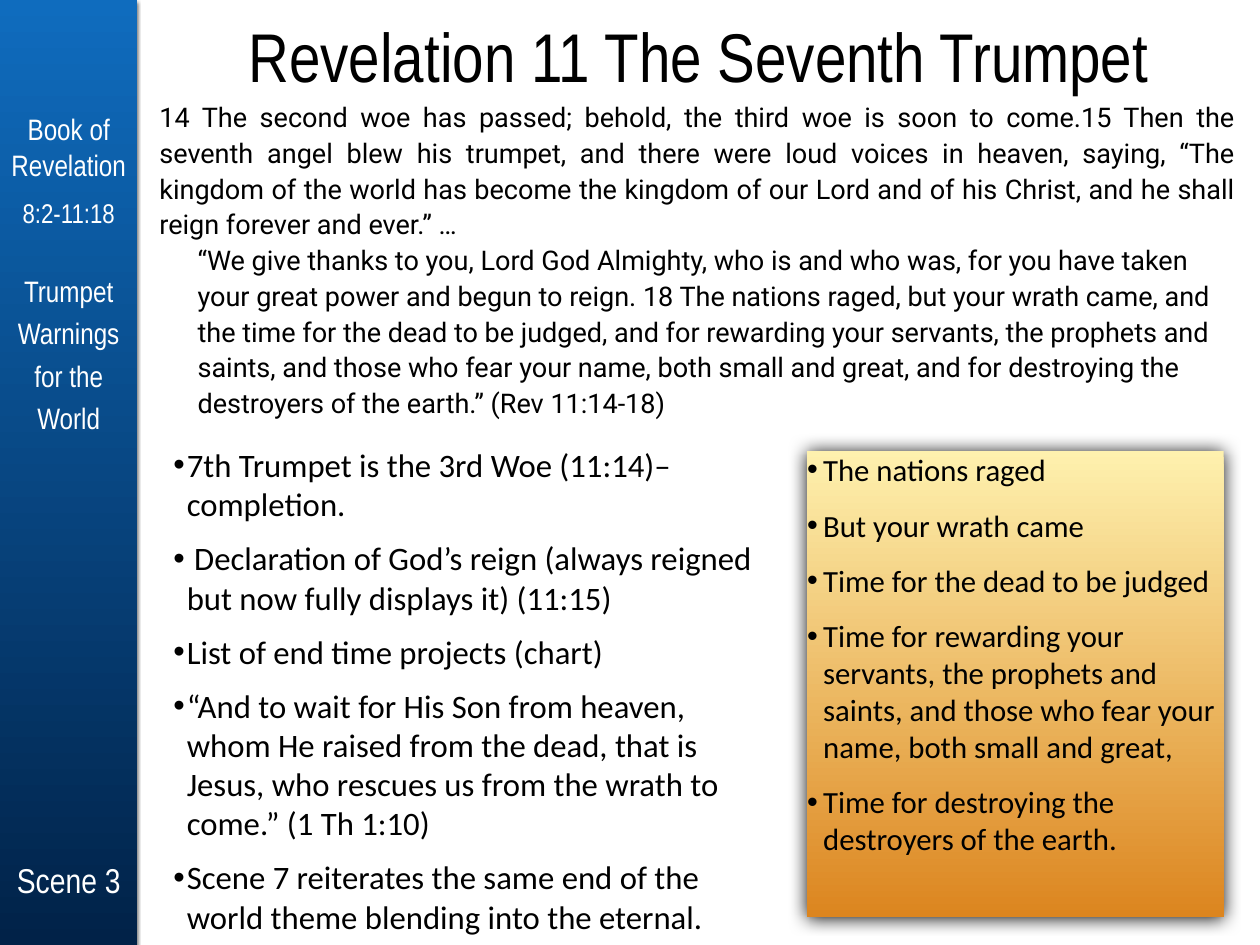
from lxml import etree
from pptx import Presentation
from pptx.dml.color import RGBColor
from pptx.enum.shapes import MSO_SHAPE
from pptx.enum.text import MSO_ANCHOR, PP_ALIGN
from pptx.oxml.ns import qn
from pptx.util import Pt

SLIDE_WIDTH, SLIDE_HEIGHT = 1024, 768
SIDEBAR_WIDTH = 111.6
BLACK, WHITE = "000000", "FFFFFF"
NARROW = "Arial Narrow"

SIDEBAR_LABELS = [  # text, top, height, size, line spacing, inset
    ("Book of Revelation", 90.7, 56.9, 24, 1, 0),
    ("8:2-11:18", 144.7, 56.9, 22, 1, 0),
    ("Trumpet Warnings for the World", 225.4, 119.5, 24, 1.2, 4.3),
    ("Scene 3", 679.7, 69.8, 28, 1, 0),
]
NARRATIVE = (
    "14 The second woe has passed; behold, the third woe is soon to come."
    "15 Then the seventh angel blew his trumpet, and there were loud voices in heaven, "
    "saying, “The kingdom of the world has become the kingdom of our Lord and of his "
    "Christ, and he shall reign forever and ever.” …"
)
THANKSGIVING = (
    "“We give thanks to you, Lord God Almighty, who is and who was, for you have taken "
    "your great power and begun to reign. 18 The nations raged, but your wrath came, "
    "and the time for the dead to be judged, and for rewarding your servants, the "
    "prophets and saints, and those who fear your name, both small and great, and for "
    "destroying the destroyers of the earth.” (Rev 11:14-18)"
)
MAIN_POINTS = [
    "7th Trumpet is the 3rd Woe (11:14)–completion.",
    " Declaration of God’s reign (always reigned but now fully displays it) (11:15)",
    "List of end time projects (chart)",
    "“And to wait for His Son from heaven, whom He raised from the dead, that is Jesus, "
    "who rescues us from the wrath to come.” (1 Th 1:10)",
    "Scene 7 reiterates the same end of the world theme blending into the eternal.",
]
END_TIME_PROJECTS = [
    "The nations raged",
    "But your wrath came",
    "Time for the dead to be judged",
    "Time for rewarding your servants, the prophets and saints, and those who fear "
    "your name, both small and great,",
    "Time for destroying the destroyers of the earth.",
]


def color(hex_string):
    return RGBColor.from_string(hex_string)


def set_font(paragraph, name, size, hex_string):
    paragraph.font.name = name
    paragraph.font.size = Pt(size)
    paragraph.font.color.rgb = color(hex_string)


def prepare_frame(shape, inset=0, anchor=MSO_ANCHOR.TOP):
    frame = shape.text_frame
    frame.word_wrap = True
    frame.vertical_anchor = anchor
    frame.margin_left = frame.margin_right = Pt(inset)
    frame.margin_top = frame.margin_bottom = Pt(inset)
    return frame


def add_paragraphs(frame, texts):
    """Fill the frame with one paragraph per text and return the paragraphs."""
    for index, text in enumerate(texts):
        paragraph = frame.add_paragraph() if index else frame.paragraphs[0]
        paragraph.text = text
    return frame.paragraphs


def add_text(slide, box, texts, font, size, hex_string, align, spacing=1, inset=0):
    shape = slide.shapes.add_textbox(*map(Pt, box))
    frame = prepare_frame(shape, inset, MSO_ANCHOR.MIDDLE)
    paragraphs = add_paragraphs(frame, texts)
    for paragraph in paragraphs:
        paragraph.alignment = align
        paragraph.line_spacing = spacing
        set_font(paragraph, font, size, hex_string)
    return paragraphs


def add_rectangle(slide, box):
    shape = slide.shapes.add_shape(MSO_SHAPE.RECTANGLE, *map(Pt, box))
    shape.shadow.inherit = False
    shape.line.fill.background()
    return shape


def add_gradient_panel(slide, box, top_color, bottom_color, alpha, blur, distance):
    """Add a rectangle with a downward gradient and a soft black shadow below it."""
    shape = add_rectangle(slide, box)
    shape.fill.gradient()
    shape.fill.gradient_angle = 270
    for stop, hex_string in zip(shape.fill.gradient_stops, (top_color, bottom_color)):
        stop.color.rgb = color(hex_string)
    effects = shape._element.spPr.find(qn("a:effectLst"))
    shadow = etree.SubElement(
        effects, qn("a:outerShdw"), blurRad=str(Pt(blur)), dist=str(Pt(distance)),
        dir="5400000", algn="ctr", rotWithShape="0")
    shade = etree.SubElement(shadow, qn("a:srgbClr"), val=BLACK)
    etree.SubElement(shade, qn("a:alpha"), val=str(alpha * 1000))
    return shape


def add_bullets(shape, texts, size, indent, gap):
    for index, paragraph in enumerate(add_paragraphs(prepare_frame(shape), texts)):
        properties = paragraph._p.get_or_add_pPr()
        properties.set("marL", str(Pt(indent)))
        properties.set("indent", str(-Pt(indent)))
        etree.SubElement(properties, qn("a:buFont"), typeface="Arial")
        etree.SubElement(properties, qn("a:buChar"), char="•")
        paragraph.alignment = PP_ALIGN.LEFT
        paragraph.space_before = Pt(gap if index else 0)
        set_font(paragraph, "Calibri", size, BLACK)


def add_sidebar(slide):
    add_gradient_panel(slide, (0, 0, SIDEBAR_WIDTH, SLIDE_HEIGHT),
                       "0F6CBE", "012248", 50, 3, 2)
    for text, top, height, size, spacing, inset in SIDEBAR_LABELS:
        add_text(slide, (0, top, SIDEBAR_WIDTH, height), [text], NARROW, size, WHITE,
                 PP_ALIGN.CENTER, spacing, inset)


def main():
    presentation = Presentation()
    presentation.slide_width = Pt(SLIDE_WIDTH)
    presentation.slide_height = Pt(SLIDE_HEIGHT)
    slide = presentation.slides.add_slide(presentation.slide_layouts[6])

    add_sidebar(slide)
    add_text(slide, (SIDEBAR_WIDTH, 10, SLIDE_WIDTH - SIDEBAR_WIDTH, 70),
             ["Revelation 11 The Seventh Trumpet"], NARROW, 56, BLACK, PP_ALIGN.CENTER)

    main_points = add_rectangle(slide, (141, 361.5, 486, 388))
    main_points.fill.solid()
    main_points.fill.fore_color.rgb = color(WHITE)
    add_bullets(main_points, MAIN_POINTS, 26.6, 10.8, 12)

    thanksgiving = add_text(
        slide, (125.3, 74.2, 882.7, 271.4), [NARRATIVE, THANKSGIVING], "Roboto", 22,
        BLACK, PP_ALIGN.JUSTIFY, 1.1, 4.3)[1]
    thanksgiving.alignment = PP_ALIGN.LEFT
    thanksgiving._p.get_or_add_pPr().set("marL", str(Pt(31)))

    projects = add_gradient_panel(slide, (656, 366.5, 338.4, 378.7),
                                  "FEF1AE", "DC851F", 100, 15, 0.7)
    add_bullets(projects, END_TIME_PROJECTS, 25, 13, 15)

    presentation.save("out.pptx")


if __name__ == "__main__":
    main()
